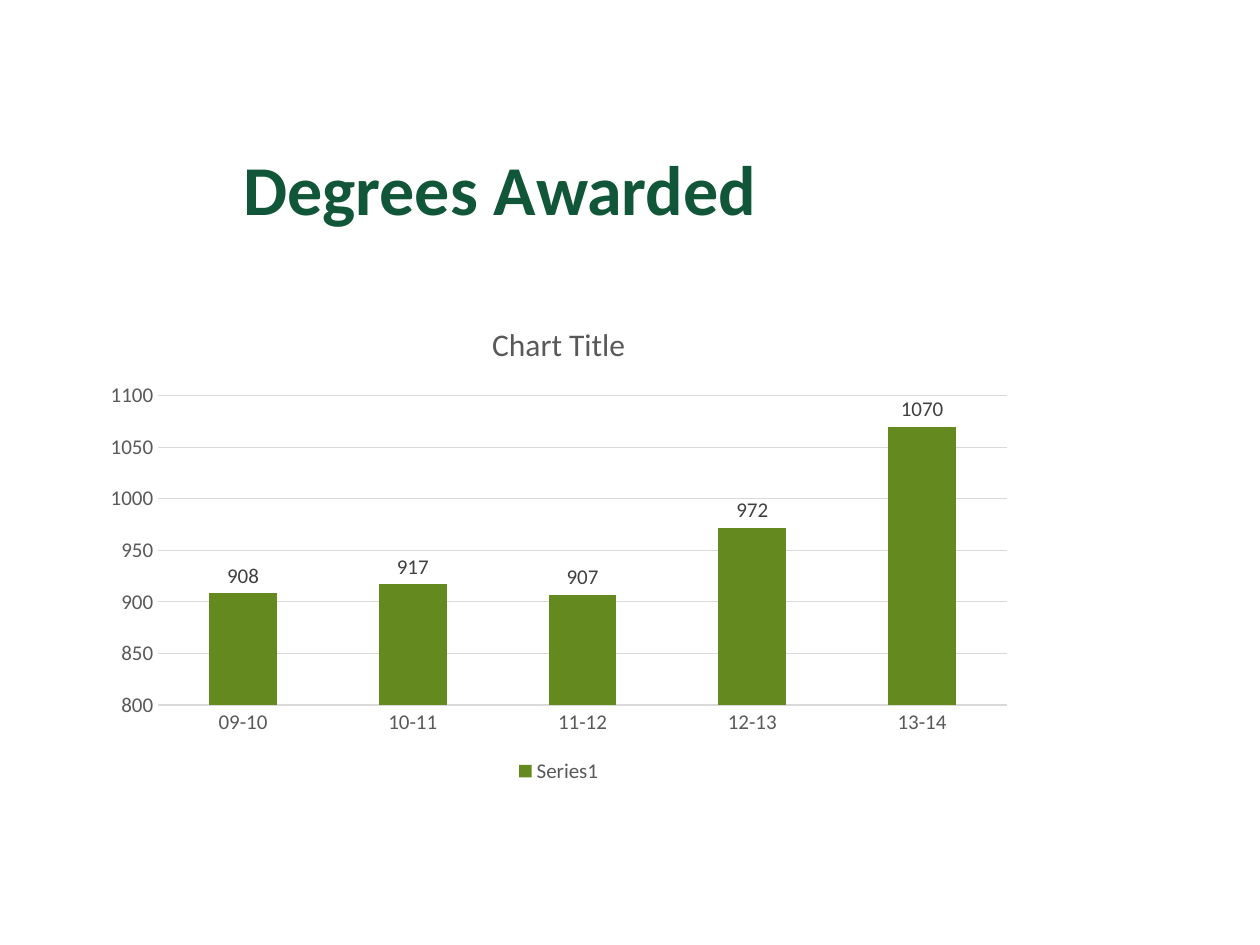
"""Build the Degrees Awarded slide with its column chart."""
import pptx
import pptx.chart.data
import pptx.dml.color
import pptx.enum.chart
import pptx.enum.text
import pptx.util

Inches, Pt = pptx.util.Inches, pptx.util.Pt
RGBColor = pptx.dml.color.RGBColor
XL = pptx.enum.chart

TITLE = "Degrees Awarded"
CHART_TITLE = "Chart Title"
SERIES = "Series1"
DEGREES = {"09-10": 908, "10-11": 917, "11-12": 907, "12-13": 972, "13-14": 1070}

FONT = "Calibri"
DARK_GREEN = RGBColor(0x11, 0x56, 0x39)
BAR_GREEN = RGBColor(0x63, 0x89, 0x1F)
GRAY = RGBColor(0x59, 0x59, 0x59)
LABEL_GRAY = RGBColor(0x40, 0x40, 0x40)
GRID_GRAY = RGBColor(0xD9, 0xD9, 0xD9)


def style(font, size, color, bold=False):
    font.name, font.size, font.bold = FONT, Pt(size), bold
    font.color.rgb = color


def add_title(s):
    sp = s.shapes.title
    sp.left, sp.top, sp.width, sp.height = map(Inches, (1.83, 0.68, 8.5, 1.61))
    tf = sp.text_frame
    tf.text = TITLE
    tf.word_wrap = True
    tf.vertical_anchor = pptx.enum.text.MSO_ANCHOR.MIDDLE
    p = tf.paragraphs[0]
    p.alignment = pptx.enum.text.PP_ALIGN.LEFT
    style(p.font, 40, DARK_GREEN, True)


def add_degrees_chart(s):
    data = pptx.chart.data.CategoryChartData()
    data.categories = list(DEGREES)
    data.add_series(SERIES, list(DEGREES.values()))
    box = map(Inches, (0.73, 2.38, 7.41, 3.88))
    chart = s.shapes.add_chart(XL.XL_CHART_TYPE.COLUMN_CLUSTERED, *box, data).chart
    style(chart.font, 12, GRAY)

    chart.has_title = True
    p = chart.chart_title.text_frame.paragraphs[0]
    p.text = CHART_TITLE
    style(p.font, 18, GRAY)
    chart.chart_title.include_in_layout = False

    chart.has_legend = True
    chart.legend.position = XL.XL_LEGEND_POSITION.BOTTOM
    chart.legend.include_in_layout = False
    style(chart.legend.font, 12, GRAY)

    for axis in (chart.category_axis, chart.value_axis):
        axis.major_tick_mark = axis.minor_tick_mark = XL.XL_TICK_MARK.NONE
        axis.format.line.fill.background()
        style(axis.tick_labels.font, 12, GRAY)
    axis = chart.value_axis
    axis.minimum_scale, axis.maximum_scale, axis.major_unit = 800, 1100, 50
    grid = axis.major_gridlines.format.line
    grid.color.rgb, grid.width = GRID_GRAY, Pt(0.75)

    plot = chart.plots[0]
    plot.gap_width, plot.vary_by_categories = 150, False
    series = plot.series[0]
    series.format.fill.solid()
    series.format.fill.fore_color.rgb = BAR_GREEN
    labels = series.data_labels
    labels.show_value = True
    labels.position = XL.XL_LABEL_POSITION.OUTSIDE_END
    style(labels.font, 12, LABEL_GRAY)


def main():
    prs = pptx.Presentation()
    prs.slide_width, prs.slide_height = Inches(10), Inches(7.5)
    s = prs.slides.add_slide(prs.slide_layouts.get_by_name("Title Only"))
    add_title(s)
    add_degrees_chart(s)
    prs.save("out.pptx")


if __name__ == "__main__":
    main()
